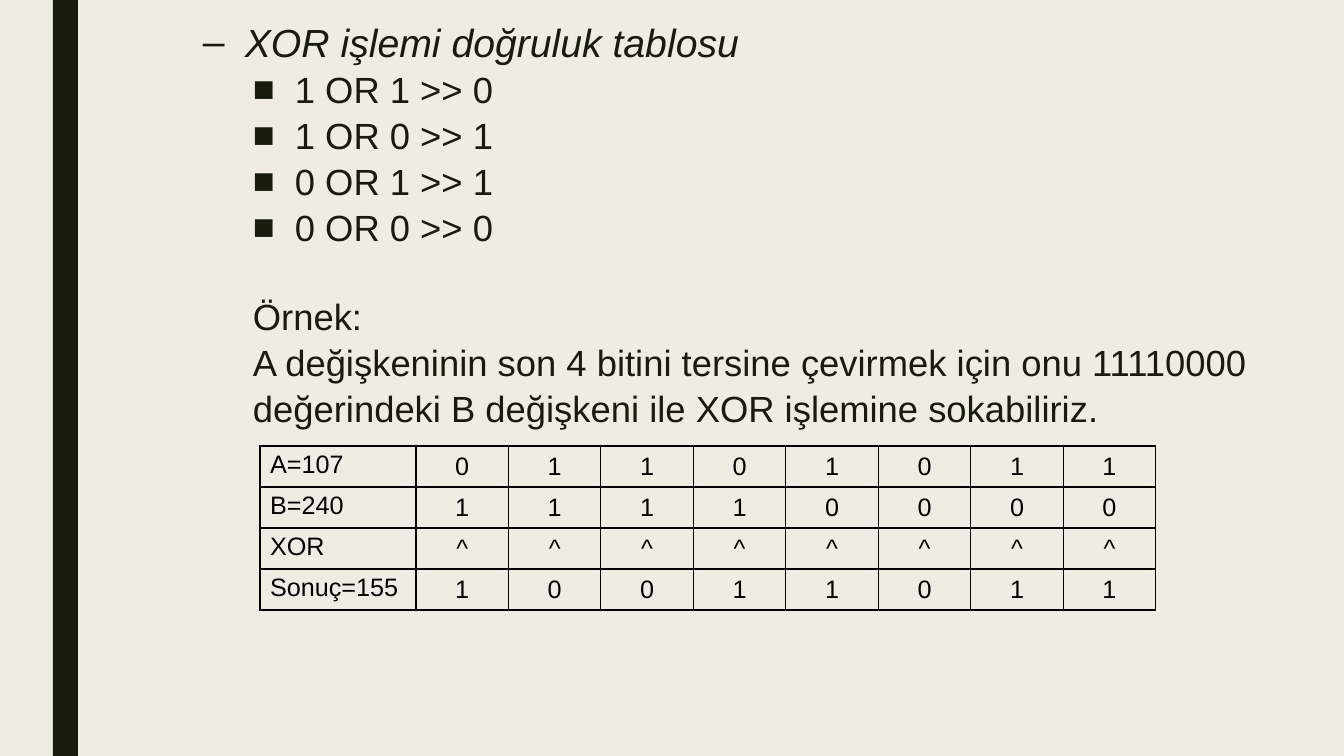
"""Build the slide with the XOR truth table and a worked bit example."""
from dataclasses import dataclass

import pptx
import pptx.dml.color
import pptx.enum.shapes
import pptx.enum.text
import pptx.oxml
import pptx.oxml.ns
import pptx.util

PX = 914400 / 100.8
COLORS = {"paper": "EFEDE3", "ink": "191B0E", "grid": "000000"}
FONT = "Arial"
BITS = 8


@dataclass(frozen=True)
class Line:
    text: str
    indent: int
    bullet: str = ""
    size: int = 26
    italic: bool = False
    before: int = 0


@dataclass(frozen=True)
class BitRow:
    label: str
    bits: str


LINES = [
    Line("XOR işlemi doğruluk tablosu", 101, "–", 28, True),
    Line("1 OR 1 >> 0", 151, "■"),
    Line("1 OR 0 >> 1", 151, "■"),
    Line("0 OR 1 >> 1", 151, "■"),
    Line("0 OR 0 >> 0", 151, "■"),
    Line("Örnek:", 109, before=31),
    Line("A değişkeninin son 4 bitini tersine çevirmek için onu 11110000 "
         "değerindeki B değişkeni ile XOR işlemine sokabiliriz.", 109),
]
ROWS = [
    BitRow("A=107", "01101011"),
    BitRow("B=240", "11110000"),
    BitRow("XOR", "^" * BITS),
    BitRow("Sonuç=155", "10011011"),
]


def px(length: float) -> pptx.util.Emu:
    return pptx.util.Emu(round(length * PX))


def color(name: str) -> pptx.dml.color.RGBColor:
    return pptx.dml.color.RGBColor.from_string(COLORS[name])


def apply(target, values: dict) -> None:
    for name, value in values.items():
        setattr(target, name, value)


def set_font(font, size: int, ink: str, italic: bool = False) -> None:
    apply(font, {"name": FONT, "size": pptx.util.Pt(size), "italic": italic})
    font.color.rgb = color(ink)


def element(xml: str):
    return pptx.oxml.parse_xml(xml.replace(">", f' {pptx.oxml.ns.nsdecls("a")}>', 1))


def draw_bar(page) -> None:
    bar = page.shapes.add_shape(
        pptx.enum.shapes.MSO_SHAPE.RECTANGLE, px(53), 0, px(25), px(756))
    bar.shadow.inherit = False
    bar.fill.solid()
    bar.fill.fore_color.rgb = color("ink")
    bar.line.fill.background()


def draw_lines(page) -> None:
    box = page.shapes.add_textbox(px(134), px(11), px(1180), px(420))
    box.text_frame.word_wrap = True
    for index, line in enumerate(LINES):
        para = box.text_frame.paragraphs[0] if index == 0 else box.text_frame.add_paragraph()
        properties = para._p.get_or_add_pPr()
        properties.set("marL", str(px(line.indent)))
        properties.set("indent", str(px(-42 if line.bullet else 0)))
        if line.bullet:
            properties.append(element(f'<a:buFont typeface="{FONT}"></a:buFont>'))
            properties.append(element(f'<a:buChar char="{line.bullet}"></a:buChar>'))
        apply(para, {"line_spacing": 1.05, "space_before": pptx.util.Pt(line.before)})
        span = para.add_run()
        span.text = line.text
        set_font(span.font, line.size, "ink", line.italic)


def fill_cell(cell, text: str, centred: bool) -> None:
    cell.text = text
    para = cell.text_frame.paragraphs[0]
    set_font(para.runs[0].font, 18, "grid")
    if centred:
        cell.vertical_anchor = pptx.enum.text.MSO_ANCHOR.MIDDLE
        para.alignment = pptx.enum.text.PP_ALIGN.CENTER
    properties = cell._tc.get_or_add_tcPr()
    for side in ("lnL", "lnR", "lnT", "lnB"):
        properties.append(element(
            f'<a:{side} w="12700"><a:solidFill><a:srgbClr val="{COLORS["grid"]}"/>'
            f'</a:solidFill></a:{side}>'))
    cell.fill.background()


def draw_table(page) -> None:
    frame = page.shapes.add_table(
        len(ROWS), BITS + 1, px(260), px(446), px(896), px(164))
    table = frame.table
    apply(table, {"first_row": False, "horz_banding": False})
    for index, column in enumerate(table.columns):
        column.width = px(740 / BITS if index else 156)
    for bit_row, row in zip(ROWS, table.rows):
        row.height = px(41)
        for index, text in enumerate([bit_row.label, *bit_row.bits]):
            fill_cell(row.cells[index], text, index > 0)


def main() -> None:
    deck = pptx.Presentation()
    apply(deck, {"slide_width": px(1344), "slide_height": px(756)})
    page = deck.slides.add_slide(deck.slide_layouts[6])
    page.background.fill.solid()
    page.background.fill.fore_color.rgb = color("paper")
    draw_bar(page)
    draw_lines(page)
    draw_table(page)
    deck.save("out.pptx")


if __name__ == "__main__":
    main()
